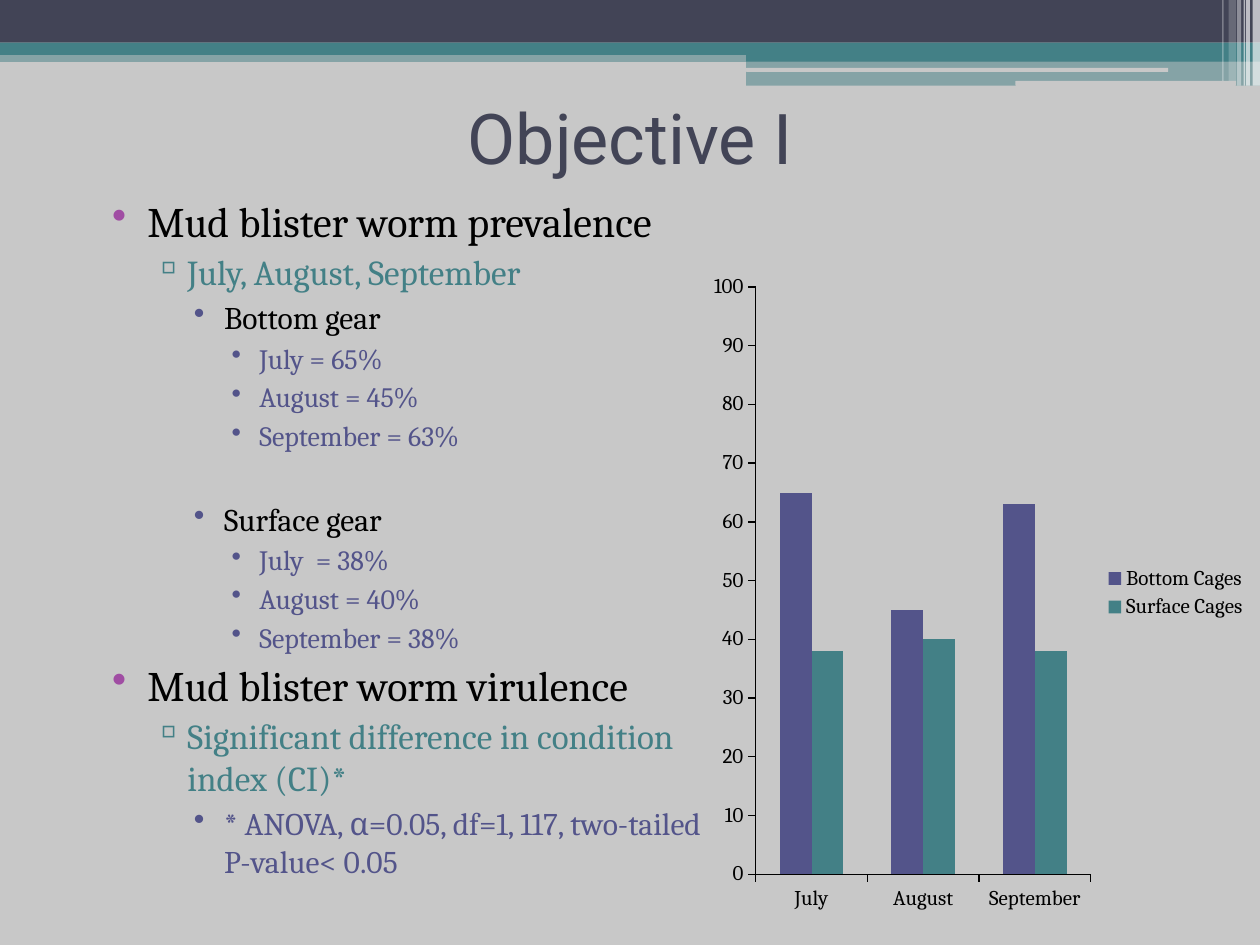
from lxml import etree
from pptx import Presentation
from pptx.chart.data import CategoryChartData
from pptx.dml.color import RGBColor
from pptx.enum.chart import XL_CHART_TYPE, XL_LEGEND_POSITION, XL_TICK_MARK
from pptx.enum.shapes import MSO_SHAPE
from pptx.enum.text import MSO_ANCHOR, PP_ALIGN
from pptx.oxml.ns import qn
from pptx.util import Cm, Pt

RECT, ROUND = MSO_SHAPE.RECTANGLE, MSO_SHAPE.ROUNDED_RECTANGLE
COLUMNS = XL_CHART_TYPE.COLUMN_CLUSTERED
LEGEND_RIGHT = XL_LEGEND_POSITION.RIGHT
OUTSIDE, NO_TICK = XL_TICK_MARK.OUTSIDE, XL_TICK_MARK.NONE
MIDDLE, CENTER = MSO_ANCHOR.MIDDLE, PP_ALIGN.CENTER

GRAY, NAVY, TEAL = "C8C8C8", "424456", "438086"
INDIGO, PURPLE, BLACK, WHITE = "53548A", "A04DA3", "000000", "FFFFFF"
BODY_FONT, TITLE_FONT = "Cambria", "Roboto"

# level: left margin, hanging indent, size, bullet, bullet colour
LEVELS = [
    (1.02, 0.71, 24, "•", PURPLE),
    (1.83, 0.69, 20, "▫", TEAL),
    (2.57, 0.61, 18, "•", INDIGO),
    (3.28, 0.56, 16, "•", INDIGO),
]
# level, text, colour, space before
OUTLINE = [
    (0, "Mud blister worm prevalence", BLACK, 3),
    (1, "July, August, September", TEAL, 3),
    (2, "Bottom gear", BLACK, 3),
    (3, "July = 65%", INDIGO, 3),
    (3, "August = 45%", INDIGO, 3),
    (3, "September = 63%", INDIGO, 3),
    (2, "Surface gear", BLACK, 27),
    (3, "July  = 38%", INDIGO, 3),
    (3, "August = 40%", INDIGO, 3),
    (3, "September = 38%", INDIGO, 3),
    (0, "Mud blister worm virulence", BLACK, 3),
    (1, "Significant difference in condition index (CI)*", TEAL, 3),
    (2, "* ANOVA, α=0.05, df=1, 117, two-tailed P-value< 0.05", INDIGO, 3),
]
MONTHS = ["July", "August", "September"]
SERIES = [
    ("Bottom Cages", [65, 45, 63], INDIGO),
    ("Surface Cages", [38, 40, 38], TEAL),
]


def rgb(color):
    """Return the colour for a hex string."""
    return RGBColor.from_string(color)


def add_bar(slide, box, color, opacity=100, kind=RECT):
    """Add a borderless bar with the given opacity in percent."""
    sp = slide.shapes.add_shape(kind, *map(Cm, box))
    sp.shadow.inherit = False
    sp.line.fill.background()
    sp.fill.solid()
    sp.fill.fore_color.rgb = rgb(color)
    if opacity < 100:
        clr = sp.fill._xPr.find(".//" + qn("a:srgbClr"))
        etree.SubElement(clr, qn("a:alpha"), val=str(opacity * 1000))


def add_header(slide, left, top, width):
    """Draw the layered bars across the top."""
    add_bar(slide, (left, top + 1.02, width, 0.23), TEAL, 50)
    add_bar(slide, (left, top, width, 0.86), NAVY)
    add_bar(slide, (left, top + 0.86, width, 0.25), TEAL)
    tab, tab_width = left + 15.04, width - 15.04
    add_bar(slide, (tab, top + 0.99, tab_width, 0.25), TEAL)
    add_bar(slide, (tab, top + 1.22, tab_width, 0.51), TEAL, 50)
    add_bar(slide, (tab, top + 1.37, 8.51, 0.08), GRAY, kind=ROUND)
    add_bar(slide, (tab + 5.43, top + 1.63, 4.45, 0.1), GRAY, kind=ROUND)


def add_stripes(slide, left, top):
    """Draw the translucent vertical stripes in the corner."""
    stripes = [(0.61, 0.15, 1.73, 65), (0.48, 0.08, 1.73, 65), (0.43, 0.03, 1.73, 60),
               (0.3, 0.08, 1.73, 40), (0.13, 0.15, 1.63, 20), (0, 0.03, 1.63, 30)]
    for dx, width, height, opacity in stripes:
        add_bar(slide, (left + dx, top, width, height), WHITE, opacity)


def style_font(font, name, size, color):
    """Set typeface, size and colour."""
    font.name = name
    font.size = Pt(size)
    font.color.rgb = rgb(color)


def add_title(slide, *box):
    """Add the centred title."""
    tf = slide.shapes.add_textbox(*map(Cm, box)).text_frame
    tf.word_wrap = True
    tf.vertical_anchor = MIDDLE
    p = tf.paragraphs[0]
    p.text = "Objective I"
    p.alignment = CENTER
    style_font(p.runs[0].font, TITLE_FONT, 40, NAVY)


def set_bullet(p, margin, hanging, char, color):
    """Give a paragraph its indent and bullet."""
    pPr = p._p.get_or_add_pPr()
    pPr.set("marL", str(Cm(margin)))
    pPr.set("indent", str(-Cm(hanging)))
    clr = etree.SubElement(pPr, qn("a:buClr"))
    etree.SubElement(clr, qn("a:srgbClr"), val=color)
    etree.SubElement(pPr, qn("a:buChar"), char=char)


def add_outline(slide, *box):
    """Add the bulleted outline."""
    tf = slide.shapes.add_textbox(*map(Cm, box)).text_frame
    tf.word_wrap = True
    for i, (level, text, color, before) in enumerate(OUTLINE):
        p = tf.add_paragraph() if i else tf.paragraphs[0]
        margin, hanging, size, char, bullet_color = LEVELS[level]
        p.text = text
        p.level = level
        p.space_before = Pt(before)
        set_bullet(p, margin, hanging, char, bullet_color)
        style_font(p.runs[0].font, BODY_FONT, size, color)


def add_prevalence_chart(slide, *box):
    """Add the clustered columns of prevalence by month."""
    data = CategoryChartData()
    data.categories = MONTHS
    for name, values, _ in SERIES:
        data.add_series(name, values)
    chart = slide.shapes.add_chart(COLUMNS, *map(Cm, box), data).chart
    style_font(chart.font, BODY_FONT, 12, BLACK)
    chart.has_title = False
    chart.has_legend = True
    chart.legend.position = LEGEND_RIGHT
    chart.legend.include_in_layout = False
    for axis in (chart.category_axis, chart.value_axis):
        axis.has_major_gridlines = False
        axis.major_tick_mark = OUTSIDE
        axis.minor_tick_mark = NO_TICK
        axis.format.line.color.rgb = rgb(BLACK)
        axis.format.line.width = Pt(0.75)
    chart.value_axis.minimum_scale = 0
    chart.value_axis.maximum_scale = 100
    chart.value_axis.major_unit = 10
    plot = chart.plots[0]
    plot.gap_width = 150
    plot.vary_by_categories = False
    for series, (_, _, color) in zip(plot.series, SERIES):
        series.format.fill.solid()
        series.format.fill.fore_color.rgb = rgb(color)


def main():
    """Build and save the slide."""
    prs = Presentation()
    prs.slide_width, prs.slide_height = Cm(25.4), Cm(19.05)
    s = prs.slides.add_slide(prs.slide_layouts[6])
    s.background.fill.solid()
    s.background.fill.fore_color.rgb = rgb(GRAY)
    add_header(s, 0, 0, 25.4)
    add_stripes(s, 24.64, 0)
    add_title(s, 1.27, 1.27, 22.86, 2.97)
    add_outline(s, 1.7, 3.81, 12.7, 14.4)
    add_prevalence_chart(s, 14.17, 5.28, 11.23, 13.34)
    prs.save("out.pptx")


if __name__ == "__main__":
    main()
